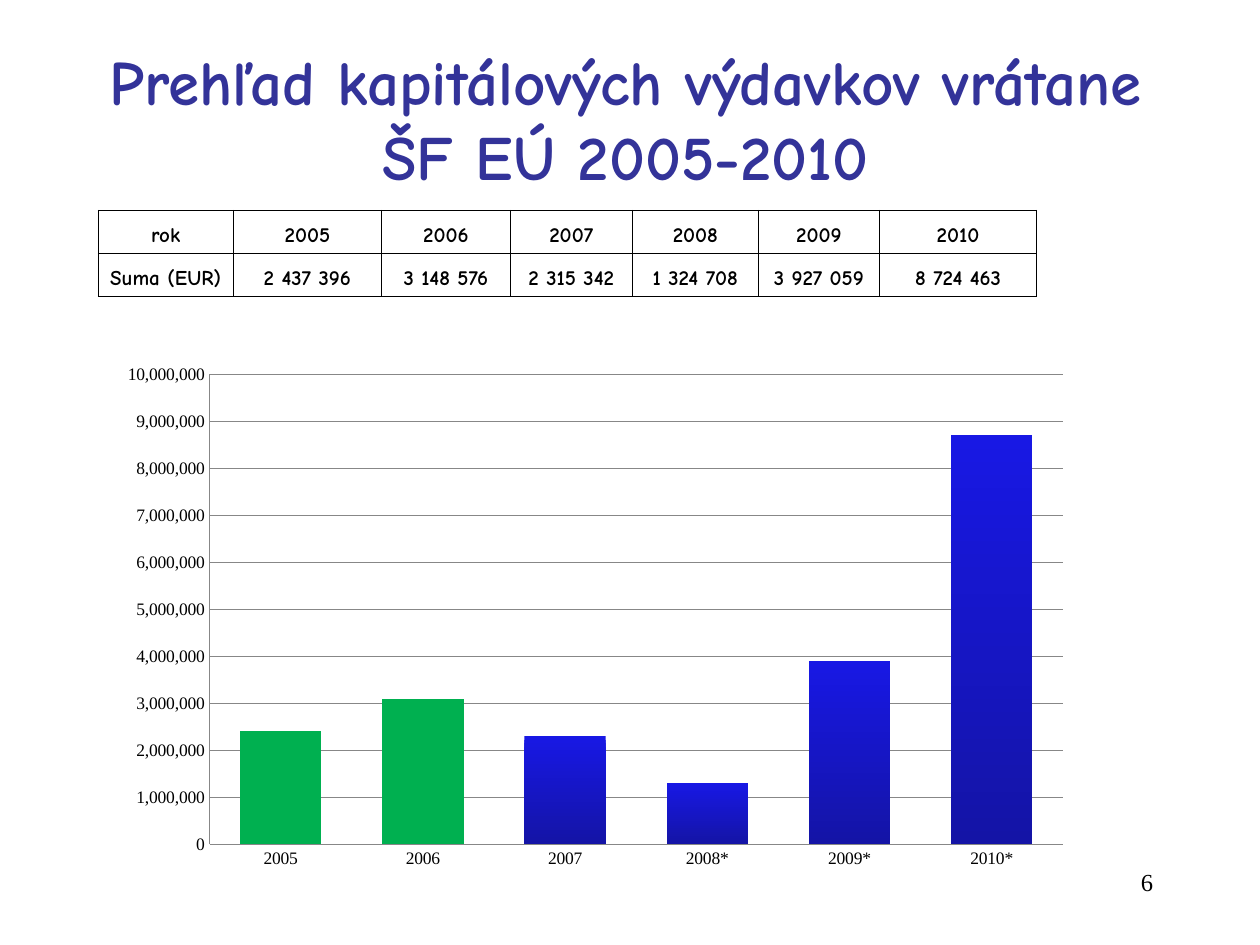
from dataclasses import dataclass

from lxml.etree import SubElement
from pptx import Presentation
from pptx.chart.data import CategoryChartData
from pptx.dml.color import RGBColor
from pptx.enum.chart import XL_CHART_TYPE, XL_TICK_MARK
from pptx.enum.text import MSO_ANCHOR, MSO_AUTO_SIZE, PP_ALIGN
from pptx.oxml.ns import qn
from pptx.util import Inches, Pt

BLACK = RGBColor(0x00, 0x00, 0x00)
TITLE_BLUE = RGBColor(0x33, 0x33, 0x99)
GREEN = RGBColor(0x00, 0xB0, 0x50)
BAR_TOP = RGBColor(0x18, 0x18, 0xE4)
BAR_BOTTOM = RGBColor(0x14, 0x14, 0xA6)
GRID_GRAY = RGBColor(0x87, 0x87, 0x87)
COMIC = "Comic Neue"
TIMES = "Times New Roman"


@dataclass(frozen=True)
class YearSpending:
    year: str
    label: str
    amount: int
    column_width: float


SPENDING = [
    YearSpending("2005", "2005", 2437396, 1.18),
    YearSpending("2006", "2006", 3148576, 1.02),
    YearSpending("2007", "2007", 2315342, 0.97),
    YearSpending("2008", "2008*", 1324708, 1.0),
    YearSpending("2009", "2009*", 3927059, 0.96),
    YearSpending("2010", "2010*", 8724463, 1.25),
]
GREEN_YEARS = 2


def write_text(frame, text: str, *, size: float, font: str = COMIC,
               color: RGBColor = BLACK, bold: bool = False,
               align: PP_ALIGN = PP_ALIGN.CENTER) -> None:
    para = frame.paragraphs[0]
    para.alignment = align
    span = para.add_run()
    span.text = text
    span.font.size = Pt(size)
    span.font.name = font
    span.font.bold = bold
    span.font.color.rgb = color


def add_borders(cell, visible_sides: str) -> None:
    properties = cell._tc.get_or_add_tcPr()
    for side in "LRTB":
        line = SubElement(properties, qn(f"a:ln{side}"), w=str(Pt(0.5)))
        if side in visible_sides:
            fill = SubElement(line, qn("a:solidFill"))
            SubElement(fill, qn("a:srgbClr"), val=str(BLACK))
        else:
            SubElement(line, qn("a:noFill"))


def add_spending_table(page) -> None:
    rows = [
        [""] * (len(SPENDING) + 1),
        ["rok"] + [item.year for item in SPENDING],
        ["Suma (EUR)"] + [f"{item.amount:,}".replace(",", " ") for item in SPENDING],
    ]
    widths = [1.07] + [item.column_width for item in SPENDING]
    table = page.shapes.add_table(
        len(rows), len(widths), Inches(0.78), Inches(1.33), Inches(7.45), Inches(1.02)
    ).table
    table.first_row = False
    table.horz_banding = False
    for column, width in zip(table.columns, widths):
        column.width = Inches(width)
    for row_index, texts in enumerate(rows):
        table.rows[row_index].height = Inches(0.34)
        for column_index, text in enumerate(texts):
            cell = table.cell(row_index, column_index)
            cell.margin_left = cell.margin_right = cell.margin_bottom = Inches(0.04)
            cell.margin_top = 0
            cell.vertical_anchor = MSO_ANCHOR.BOTTOM
            add_borders(cell, "LRTB" if text else "B")
            cell.fill.background()
            if text:
                write_text(cell.text_frame, text, size=12, bold=True)
            else:
                cell.text_frame.paragraphs[0].font.size = Pt(12)


def add_spending_chart(page) -> None:
    data = CategoryChartData(number_format="#,##0")
    data.categories = [item.label for item in SPENDING]
    data.add_series("Suma (EUR)", [round(item.amount, -5) for item in SPENDING])
    chart = page.shapes.add_chart(
        XL_CHART_TYPE.COLUMN_CLUSTERED,
        Inches(0.86), Inches(2.81), Inches(7.73), Inches(4.17), data
    ).chart
    chart.has_legend = False
    chart.has_title = False
    chart.font.name = TIMES
    chart.font.size = Pt(10)
    chart.font.color.rgb = BLACK

    for axis in (chart.category_axis, chart.value_axis):
        axis.major_tick_mark = XL_TICK_MARK.NONE
        axis.minor_tick_mark = XL_TICK_MARK.NONE
        axis.format.line.color.rgb = GRID_GRAY
    value_axis = chart.value_axis
    value_axis.minimum_scale = 0
    value_axis.maximum_scale = 10_000_000
    value_axis.major_unit = 1_000_000
    value_axis.tick_labels.number_format = "#,##0"
    value_axis.tick_labels.number_format_is_linked = False
    value_axis.major_gridlines.format.line.color.rgb = GRID_GRAY

    plot = chart.plots[0]
    plot.gap_width = 75
    plot.vary_by_categories = False
    series = plot.series[0]
    series.invert_if_negative = False
    fill = series.format.fill
    fill.gradient()
    fill.gradient_angle = 270
    for stop, color in zip(fill.gradient_stops, (BAR_TOP, BAR_BOTTOM)):
        stop.color.rgb = color
    for index in range(GREEN_YEARS):
        point_fill = series.points[index].format.fill
        point_fill.solid()
        point_fill.fore_color.rgb = GREEN


def main() -> None:
    deck = Presentation()
    deck.slide_width = Inches(10)
    deck.slide_height = Inches(7.5)
    page = deck.slides.add_slide(deck.slide_layouts[5])

    title = page.shapes.title
    title.left, title.top = Inches(0.55), Inches(0.28)
    title.width, title.height = Inches(8.83), Inches(1.31)
    title.text_frame.auto_size = MSO_AUTO_SIZE.NONE
    write_text(title.text_frame, "Prehľad kapitálových výdavkov vrátane ŠF EÚ 2005-2010",
               size=36, color=TITLE_BLUE, bold=True)

    add_spending_table(page)
    add_spending_chart(page)

    number_box = page.shapes.add_textbox(
        Inches(7.17), Inches(6.83), Inches(2.08), Inches(0.5))
    number_box.text_frame.word_wrap = True
    write_text(number_box.text_frame, "6", size=14, font=TIMES, align=PP_ALIGN.RIGHT)
    deck.save("out.pptx")


if __name__ == "__main__":
    main()
